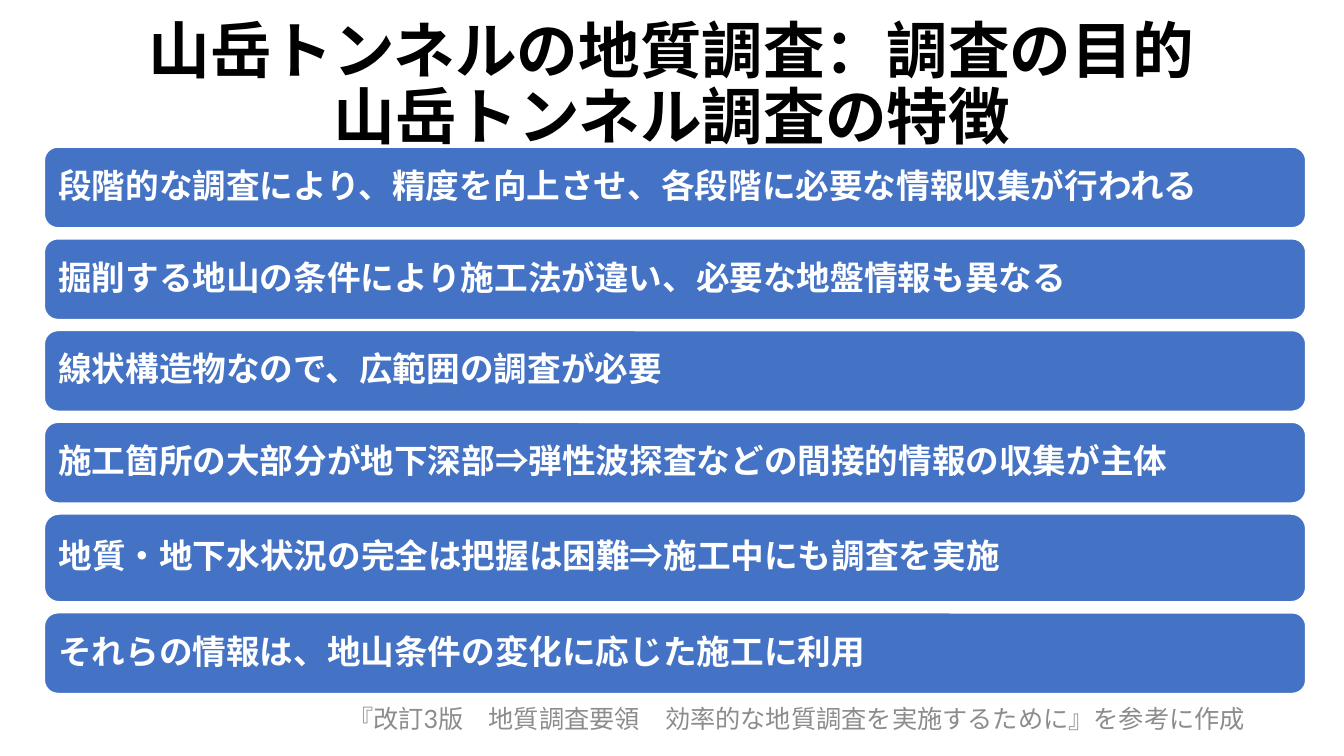
from pptx import Presentation
from pptx.dml.color import RGBColor
from pptx.enum.shapes import MSO_SHAPE
from pptx.enum.text import MSO_ANCHOR, MSO_AUTO_SIZE, PP_ALIGN
from pptx.oxml.ns import qn
from pptx.util import Inches, Pt
from lxml import etree

BLACK = RGBColor(0x00, 0x00, 0x00)
WHITE = RGBColor(0xFF, 0xFF, 0xFF)
BLUE = RGBColor(0x44, 0x72, 0xC4)
GRAY = RGBColor(0x8C, 0x8C, 0x8C)
LATIN, CJK = "Lato", "Noto Sans CJK JP"


def add_run(p, text, size, color, font, bold=False):
    r = p.add_run()
    r.text = text
    r.font.size = Pt(size)
    r.font.bold = bold
    r.font.color.rgb = color
    r.font.name = font
    # East Asian glyphs need their own typeface entry
    etree.SubElement(r.font._element, qn("a:ea"), typeface=CJK)


prs = Presentation()
prs.slide_width, prs.slide_height = Inches(13.33), Inches(7.5)
s = prs.slides.add_slide(prs.slide_layouts[5])

# Title
title = s.shapes.title
title.left, title.top = Inches(0.44), Inches(0.15)
title.width, title.height = Inches(12.45), Inches(1.42)
tf = title.text_frame
tf.word_wrap = True
tf.auto_size = MSO_AUTO_SIZE.NONE
tf.vertical_anchor = MSO_ANCHOR.MIDDLE
p = tf.paragraphs[0]
p.alignment = PP_ALIGN.CENTER
p.line_spacing = 0.9
add_run(p, "山岳トンネルの地質調査：調査の目的", 44, BLACK, LATIN, True)
p.add_line_break()
add_run(p, "山岳トンネル調査の特徴", 44, BLACK, LATIN, True)

# Source note
note = s.shapes.add_textbox(Inches(3.16), Inches(6.9), Inches(9.48), Inches(0.45))
tf = note.text_frame
tf.word_wrap = True
tf.vertical_anchor = MSO_ANCHOR.MIDDLE
p = tf.paragraphs[0]
p.alignment = PP_ALIGN.CENTER
for text, font in [
    ("『改訂", CJK),
    ("3", LATIN),
    ("版　地質調査", CJK),
    ("要領", LATIN),
    ("　効率的な地質調査を実施するために』を参考に作成", CJK),
]:
    add_run(p, text, 18, GRAY, font)

# Stacked bars: (text, height)
features = [
    ("段階的な調査により、精度を向上させ、各段階に必要な情報収集が行われる", 0.8),
    ("掘削する地山の条件により施工法が違い、必要な地盤情報も異なる", 0.8),
    ("線状構造物なので、広範囲の調査が必要", 0.8),
    ("施工箇所の大部分が地下深部⇒弾性波探査などの間接的情報の収集が主体", 0.8),
    ("地質・地下水状況の完全は把握は困難⇒施工中にも調査を実施", 0.87),
    ("それらの情報は、地山条件の変化に応じた施工に利用", 0.8),
]
GAP = 0.11
top = 1.46
for text, height in features:
    bar = s.shapes.add_shape(MSO_SHAPE.ROUNDED_RECTANGLE, Inches(0.44), Inches(top),
                             Inches(12.51), Inches(height))
    bar.shadow.inherit = False
    bar.fill.solid()
    bar.fill.fore_color.rgb = BLUE
    bar.line.color.rgb = WHITE
    bar.line.width = Pt(1)
    tf = bar.text_frame
    tf.word_wrap = True
    tf.vertical_anchor = MSO_ANCHOR.MIDDLE
    tf.margin_left = tf.margin_right = tf.margin_top = tf.margin_bottom = Inches(0.1)
    p = tf.paragraphs[0]
    p.alignment = PP_ALIGN.LEFT
    p.line_spacing = 0.9
    add_run(p, text, 24, WHITE, CJK, True)
    top += height + GAP

prs.save("out.pptx")
